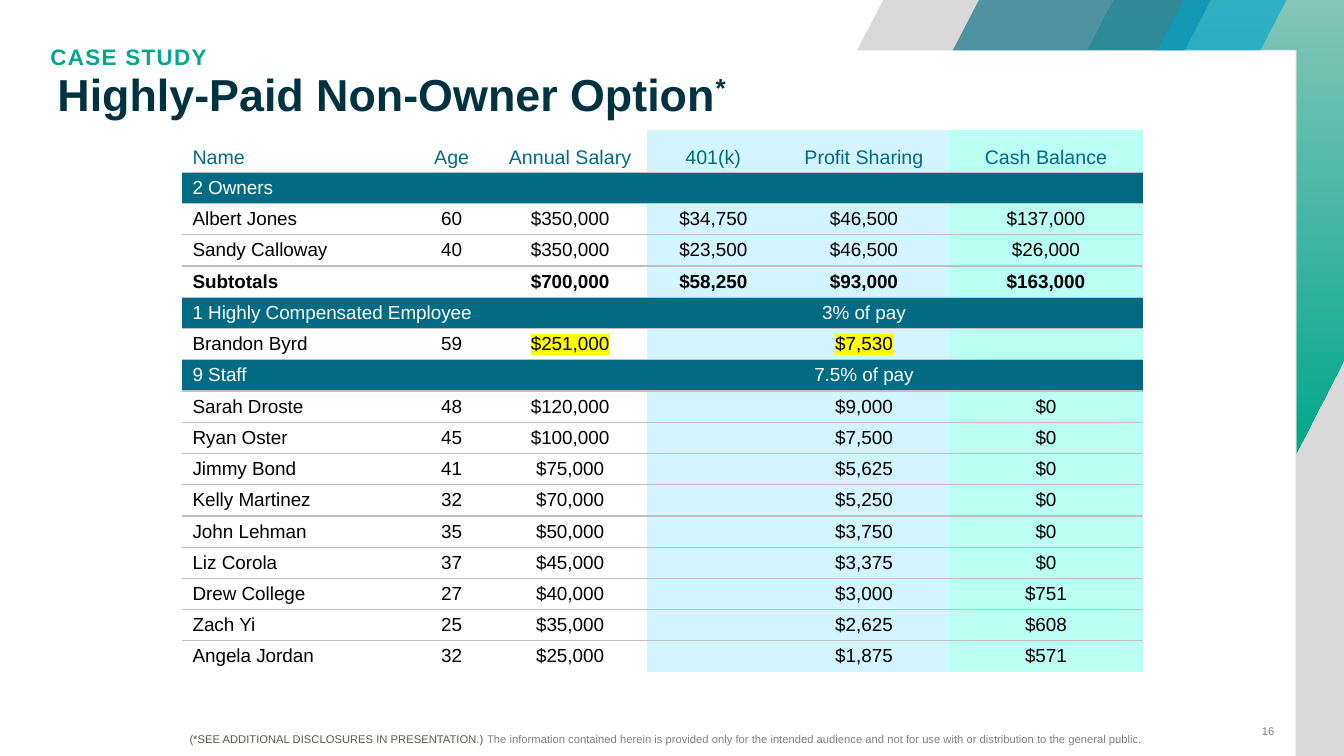
from dataclasses import dataclass

from lxml import etree
from pptx import Presentation
from pptx.dml.color import RGBColor
from pptx.enum.text import MSO_ANCHOR, MSO_AUTO_SIZE, PP_ALIGN
from pptx.oxml.ns import qn
from pptx.util import Inches, Pt


@dataclass(frozen=True)
class Theme:
    font: str = "Arial"
    green: str = "00A88C"
    teal: str = "026B84"
    cyan: str = "05A2C6"
    navy: str = "003241"
    pale_blue: str = "D3F5FF"
    pale_mint: str = "BBFFF4"
    rule: str = "BFBFBF"
    backdrop: str = "D9D9D9"
    black: str = "000000"
    white: str = "FFFFFF"
    yellow: str = "FFFF00"
    dark_grey: str = "585951"
    grey: str = "808080"
    title_size: float = 32
    kicker_size: float = 16
    header_size: float = 14
    cell_size: float = 13.5
    note_size: float = 8


THEME = Theme()
NO_TABLE_STYLE = "{2D5ABB26-0587-4C30-8999-92F81FD0307C}"
HEADER = ("Name", "Age", "Annual Salary", "401(k)", "Profit Sharing", "Cash Balance")
COLUMN_WIDTHS = (2.26, 0.82, 1.53, 1.31, 1.68, 1.93)
COLUMN_FILLS = (None, None, None, THEME.pale_blue, THEME.pale_blue, THEME.pale_mint)
HEADER_HEIGHT, ROW_HEIGHT = 0.42, 0.31
PROFIT_COLUMN = 4

# Each group: heading, profit sharing rate, people
GROUPS = (
    ("2 Owners", "", (
        ("Albert Jones", "60", "$350,000", "$34,750", "$46,500", "$137,000"),
        ("Sandy Calloway", "40", "$350,000", "$23,500", "$46,500", "$26,000"),
        ("Subtotals", "", "$700,000", "$58,250", "$93,000", "$163,000"),
    )),
    ("1 Highly Compensated Employee", "3% of pay", (
        ("Brandon Byrd", "59", "$251,000", "", "$7,530", ""),
    )),
    ("9 Staff", "7.5% of pay", (
        ("Sarah Droste", "48", "$120,000", "", "$9,000", "$0"),
        ("Ryan Oster", "45", "$100,000", "", "$7,500", "$0"),
        ("Jimmy Bond", "41", "$75,000", "", "$5,625", "$0"),
        ("Kelly Martinez", "32", "$70,000", "", "$5,250", "$0"),
        ("John Lehman", "35", "$50,000", "", "$3,750", "$0"),
        ("Liz Corola", "37", "$45,000", "", "$3,375", "$0"),
        ("Drew College", "27", "$40,000", "", "$3,000", "$751"),
        ("Zach Yi", "25", "$35,000", "", "$2,625", "$608"),
        ("Angela Jordan", "32", "$25,000", "", "$1,875", "$571"),
    )),
)


def style_run(run, size, color, bold=False):
    run.font.size = Pt(size)
    run.font.bold = bold
    run.font.name = THEME.font
    run.font.color.rgb = RGBColor.from_string(color)


def set_frame(frame, anchor):
    frame.word_wrap = True
    frame.auto_size = MSO_AUTO_SIZE.NONE
    frame.vertical_anchor = anchor
    frame.margin_left = frame.margin_right = frame.margin_top = frame.margin_bottom = 0


def place(shape, box):
    shape.left, shape.top, shape.width, shape.height = (Inches(v) for v in box)


# Corner artwork
def add_outline(slide, box, points):
    left, top = box[:2]
    corners = [(Inches(left + x), Inches(top + y)) for x, y in points]
    builder = slide.shapes.build_freeform(*corners[0])
    builder.add_line_segments(corners[1:], close=True)
    outline = builder.convert_to_shape()
    outline.shadow.inherit = False
    outline.line.fill.background()
    return outline


def set_alphas(shape, *percents):
    for color, percent in zip(shape.fill._xPr.iter(qn("a:srgbClr")), percents):
        etree.SubElement(color, qn("a:alpha"), val=str(percent * 1000))


def add_corner_art(slide, box):
    width, height = box[2:]
    band, slant, strip = 0.5, 0.26, width - 0.48

    backdrop = add_outline(slide, box, [
        (slant, 0), (width, 0), (width, height), (strip, height), (strip, band), (0, band)])
    backdrop.fill.solid()
    backdrop.fill.fore_color.rgb = RGBColor.from_string(THEME.backdrop)

    ribbon = add_outline(slide, box, [
        (2.55, 0), (width, 0), (width, 3.56), (strip, 4.5), (strip, band), (2.29, band)])
    ribbon.fill.gradient()
    ribbon.fill.gradient_angle = 270
    for stop in ribbon.fill.gradient_stops:
        stop.color.rgb = RGBColor.from_string(THEME.green)
    set_alphas(ribbon, 39, 100)

    for left, length, color in ((0.95, 2.3, THEME.teal), (2.98, 1.02, THEME.cyan)):
        stripe = add_outline(slide, box, [
            (left + slant, 0), (left + slant + length, 0), (left + length, band), (left, band)])
        stripe.fill.solid()
        stripe.fill.fore_color.rgb = RGBColor.from_string(color)
        set_alphas(stripe, 64)


# Kicker and title
def add_heading(slide, box):
    left, top, width, _ = box
    title, kicker = slide.shapes.title, slide.placeholders[1]
    place(kicker, (left, top, width, 0.35))
    place(title, (left + 0.07, top + 0.26, width, 0.65))
    kicker.text_frame.text = "CASE STUDY"
    title.text_frame.text = "Highly-Paid Non-Owner Option"
    title.text_frame.paragraphs[0].add_run().text = "*"
    for part, size, color in ((kicker, THEME.kicker_size, THEME.green),
                              (title, THEME.title_size, THEME.navy)):
        set_frame(part.text_frame, MSO_ANCHOR.TOP)
        line = part.text_frame.paragraphs[0]
        line.alignment = PP_ALIGN.LEFT
        line.line_spacing = 0.9
        line.space_before = Pt(0)
        for run in line.runs:
            style_run(run, size, color, bold=True)
    title.text_frame.paragraphs[0].runs[1].font._element.set("baseline", "30000")
    kicker_line = kicker.text_frame.paragraphs[0]
    kicker_line.runs[0].font._element.set("spc", "100")
    indents = kicker_line._p.get_or_add_pPr()
    indents.set("marL", "0")
    indents.set("indent", "0")
    etree.SubElement(indents, qn("a:buNone"))


# Contribution table
def add_bottom_rule(cell, color):
    rule = etree.Element(qn("a:lnB"), w=str(Pt(1)))
    fill = etree.SubElement(rule, qn("a:solidFill"))
    etree.SubElement(fill, qn("a:srgbClr"), val=color)
    cell._tc.get_or_add_tcPr().insert(0, rule)


def fill_cell(cell, text, column, size, color, fill, bold=False, marked=False):
    cell.margin_top = cell.margin_bottom = Inches(0.04)
    cell.vertical_anchor = MSO_ANCHOR.MIDDLE
    if fill:
        cell.fill.solid()
        cell.fill.fore_color.rgb = RGBColor.from_string(fill)
    else:
        cell.fill.background()
    line = cell.text_frame.paragraphs[0]
    line.alignment = PP_ALIGN.CENTER if column else PP_ALIGN.LEFT
    if not text:
        etree.SubElement(line._p, qn("a:endParaRPr"), sz=str(int(size * 100)))
        return
    line.text = text
    run = line.runs[0]
    style_run(run, size, color, bold)
    if marked:
        highlight = etree.Element(qn("a:highlight"))
        etree.SubElement(highlight, qn("a:srgbClr"), val=THEME.yellow)
        run.font._element.find(qn("a:solidFill")).addnext(highlight)


def add_contributions(slide, box):
    rows = [("header", HEADER)]
    for heading, rate, people in GROUPS:
        rows.append(("group", (heading, "", "", "", rate, "")))
        rows += [("person", person) for person in people]
    frame = slide.shapes.add_table(len(rows), len(HEADER), *(Inches(v) for v in box))
    contributions = frame.table
    contributions.first_row = contributions.horz_banding = False
    contributions._tbl.tblPr.find(qn("a:tableStyleId")).text = NO_TABLE_STYLE
    for column, width in zip(contributions.columns, COLUMN_WIDTHS):
        column.width = Inches(width)

    for r, (kind, values) in enumerate(rows):
        header, group = kind == "header", kind == "group"
        contributions.rows[r].height = Inches(HEADER_HEIGHT if header else ROW_HEIGHT)
        size = THEME.header_size if header else THEME.cell_size
        color = THEME.teal if header else THEME.white if group else THEME.black
        for c, text in enumerate(values):
            cell = contributions.cell(r, c)
            fill_cell(cell, text, c, size, color, THEME.teal if group else COLUMN_FILLS[c],
                      values[0] == "Subtotals", text in ("$251,000", "$7,530"))
            if header:
                cell.vertical_anchor = MSO_ANCHOR.BOTTOM
            if r < len(rows) - 1:
                add_bottom_rule(cell, THEME.rule)
        if values[0].startswith("1 Highly"):
            contributions.cell(r, 0).merge(contributions.cell(r, PROFIT_COLUMN - 1))


# Disclosure and page number
def add_note(slide, box, pieces, alignment=PP_ALIGN.LEFT):
    note = slide.shapes.add_textbox(*(Inches(v) for v in box))
    set_frame(note.text_frame, MSO_ANCHOR.MIDDLE)
    line = note.text_frame.paragraphs[0]
    line.alignment = alignment
    for text, color in pieces:
        run = line.add_run()
        run.text = text
        style_run(run, THEME.note_size, color)


def main():
    deck = Presentation()
    deck.slide_width, deck.slide_height = Inches(13.33), Inches(7.5)
    slide = deck.slides.add_slide(deck.slide_layouts[1])
    add_corner_art(slide, (8.5, 0, 4.83, 7.5))
    add_heading(slide, (0.5, 0.46, 10, 0.91))
    add_contributions(slide, (1.81, 1.29, 9.53, 5.38))
    add_note(slide, (12.26, 7.13, 0.38, 0.24), [("16", THEME.grey)], PP_ALIGN.RIGHT)
    add_note(slide, (1.88, 7.21, 10, 0.25), [
        ("(*SEE ADDITIONAL DISCLOSURES IN PRESENTATION.) ", THEME.dark_grey),
        ("The information contained herein is provided only for the intended audience "
         "and not for use with or distribution to the general public.", THEME.grey)])
    deck.save("out.pptx")


if __name__ == "__main__":
    main()
